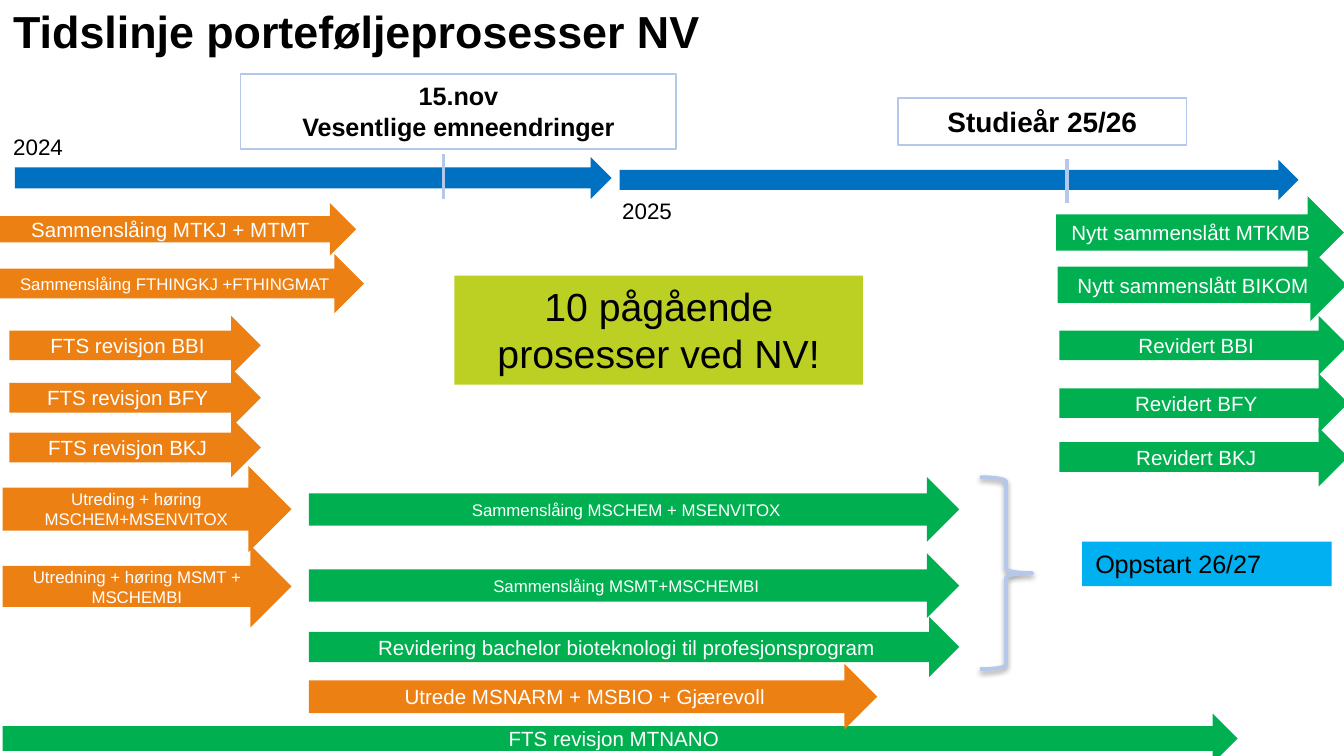
from dataclasses import dataclass

from lxml import etree
from pptx import Presentation
from pptx.dml.color import RGBColor
from pptx.enum.shapes import MSO_CONNECTOR, MSO_SHAPE
from pptx.enum.text import MSO_ANCHOR, MSO_AUTO_SIZE, PP_ALIGN
from pptx.oxml import parse_xml
from pptx.oxml.ns import nsdecls, qn
from pptx.util import Cm, Pt

RECTANGLE = MSO_SHAPE.RECTANGLE
RIGHT_ARROW = MSO_SHAPE.RIGHT_ARROW
RIGHT_BRACE = MSO_SHAPE.RIGHT_BRACE
STRAIGHT = MSO_CONNECTOR.STRAIGHT
TOP, MIDDLE = MSO_ANCHOR.TOP, MSO_ANCHOR.MIDDLE
LEFT, CENTER = PP_ALIGN.LEFT, PP_ALIGN.CENTER
GROW, FIXED = MSO_AUTO_SIZE.SHAPE_TO_FIT_TEXT, MSO_AUTO_SIZE.NONE

COLOURS = {
    "white": "FFFFFF",
    "black": "000000",
    "timeline": "0070C0",
    "ongoing": "ED8013",
    "result": "00B050",
    "outline": "B6C8E9",
    "start": "00B0F0",
    "summary": "BCD024",
}


@dataclass
class Box:
    """A shape with its frame in centimetres and its wording."""
    left: float
    top: float
    width: float
    height: float
    text: str = ""
    size: float = 11
    fill: str = ""
    outline: str = ""
    align: PP_ALIGN = CENTER
    bold: bool = False


@dataclass
class Milestone:
    x: float
    top: float
    bottom: float


YEARS = [
    Box(0.28, 2.97, 11.28, 0.79, fill="timeline"),
    Box(11.71, 3.02, 12.83, 0.76, fill="timeline"),
]
MILESTONES = [Milestone(8.38, 2.92, 3.76), Milestone(20.17, 3, 3.84)]

PROGRAMMES = ["BBI", "BFY", "BKJ"]
REVISIONS = [
    Box(0.18, top, 4.75, 1.12, f"FTS revisjon {name}", fill="ongoing")
    for name, top in zip(PROGRAMMES, [5.97, 6.96, 7.9])
]
REVISED = [
    Box(20.02, top, 5.46, 1.12, f"Revidert {name}", fill="result")
    for name, top in zip(PROGRAMMES, [5.97, 7.06, 8.08])
]
PROCESSES = [
    Box(-0.03, 3.84, 6.76, 0.99, "Sammenslåing MTKJ + MTMT", fill="ongoing"),
    Box(0, 4.8, 6.88, 1.12, "Sammenslåing FTHINGKJ +FTHINGMAT", 9, "ongoing"),
    *REVISIONS,
    Box(19.96, 3.71, 5.44, 1.37, "Nytt sammenslått MTKMB", fill="result"),
    Box(19.99, 4.7, 5.46, 1.37, "Nytt sammenslått BIKOM", fill="result"),
    *REVISED,
    Box(0.05, 13.49, 23.34, 0.94, "FTS revisjon MTNANO", fill="result"),
    Box(0.05, 8.81, 5.46, 1.63, "Utreding + høring MSCHEM+MSENVITOX", 9, "ongoing"),
    Box(0.05, 10.31, 5.46, 1.55, "Utredning + høring MSMT + MSCHEMBI", 9, "ongoing"),
    Box(5.84, 9.02, 12.29, 1.22, "Sammenslåing MSCHEM + MSENVITOX", 9, "result"),
    Box(5.84, 10.46, 12.29, 1.22, "Sammenslåing MSMT+MSCHEMBI", 9, "result"),
    Box(5.84, 11.66, 12.29, 1.14,
        "Revidering bachelor bioteknologi til profesjonsprogram", fill="result"),
    Box(5.84, 12.55, 10.74, 1.24, "Utrede MSNARM + MSBIO + Gjærevoll", fill="ongoing"),
]
LABELS = [
    Box(0, -0.05, 15.11, 1.3, "Tidslinje porteføljeprosesser NV", 24, "white",
        align=LEFT, bold=True),
    Box(0, 2.39, 1.63, 0.76, "2024", 12, align=LEFT),
    Box(11.51, 3.61, 1.63, 0.76, "2025", 12, align=LEFT),
    Box(4.55, 1.4, 8.23, 1.42, "15.nov\nVesentlige emneendringer", 13.5,
        outline="outline", bold=True),
    Box(16.97, 1.85, 5.46, 0.89, "Studieår 25/26", 15, outline="outline", bold=True),
    Box(20.45, 10.24, 4.72, 0.84, "Oppstart 26/27", 13.5, "start", align=LEFT),
    Box(8.59, 5.21, 7.72, 2.06, "10 pågående prosesser ved NV!", 21, "summary"),
]
BRACE = Box(18.52, 9.02, 0.99, 3.63, outline="outline")


def colour(name: str) -> RGBColor:
    return RGBColor.from_string(COLOURS[name])


def apply(target, values: dict) -> None:
    for attribute, value in values.items():
        setattr(target, attribute, value)


def draw_box(slide, box: Box, kind: MSO_SHAPE, text_colour: str = "white",
             anchor: MSO_ANCHOR = MIDDLE, fit: MSO_AUTO_SIZE = FIXED,
             line_width: float = 0.75):
    shape = slide.shapes.add_shape(
        kind, Cm(box.left), Cm(box.top), Cm(box.width), Cm(box.height))
    shape.shadow.inherit = False
    if box.fill:
        shape.fill.solid()
        shape.fill.fore_color.rgb = colour(box.fill)
    else:
        shape.fill.background()
    if box.outline:
        shape.line.color.rgb = colour(box.outline)
        shape.line.width = Pt(line_width)
    else:
        shape.line.fill.background()
    if box.text:
        frame = shape.text_frame
        frame.text = box.text
        apply(frame, {"word_wrap": True, "vertical_anchor": anchor, "auto_size": fit})
        for paragraph in frame.paragraphs:
            paragraph.alignment = box.align
            apply(paragraph.font, {"name": "Arial", "size": Pt(box.size), "bold": box.bold})
            paragraph.font.color.rgb = colour(text_colour)
    return shape


def draw_milestone(slide, mark: Milestone) -> None:
    line = slide.shapes.add_connector(
        STRAIGHT, Cm(mark.x), Cm(mark.top), Cm(mark.x), Cm(mark.bottom))
    line.line.color.rgb = colour("outline")
    line.line.width = Pt(2)
    etree.SubElement(line._element.spPr, qn("a:effectLst"))


def draw_brace(slide, box: Box) -> None:
    """Draw the brace with a soft shadow below it."""
    brace = draw_box(slide, box, RIGHT_BRACE, line_width=2)
    effects = brace._element.spPr.find(qn("a:effectLst"))
    effects.append(parse_xml(
        f'<a:outerShdw {nsdecls("a")} blurRad="{Pt(3.1)}" dist="{Pt(1.6)}" '
        f'dir="5400000" rotWithShape="0"><a:srgbClr val="{COLOURS["black"]}">'
        '<a:alpha val="38000"/></a:srgbClr></a:outerShdw>'))


def main() -> None:
    deck = Presentation()
    apply(deck, {"slide_width": Cm(25.4), "slide_height": Cm(14.29)})
    slide = deck.slides.add_slide(deck.slide_layouts[6])
    for arrow in YEARS + PROCESSES:
        draw_box(slide, arrow, RIGHT_ARROW)
    for label in LABELS:
        draw_box(slide, label, RECTANGLE, "black", TOP, GROW)
    for mark in MILESTONES:
        draw_milestone(slide, mark)
    draw_brace(slide, BRACE)
    deck.save("out.pptx")


if __name__ == "__main__":
    main()
